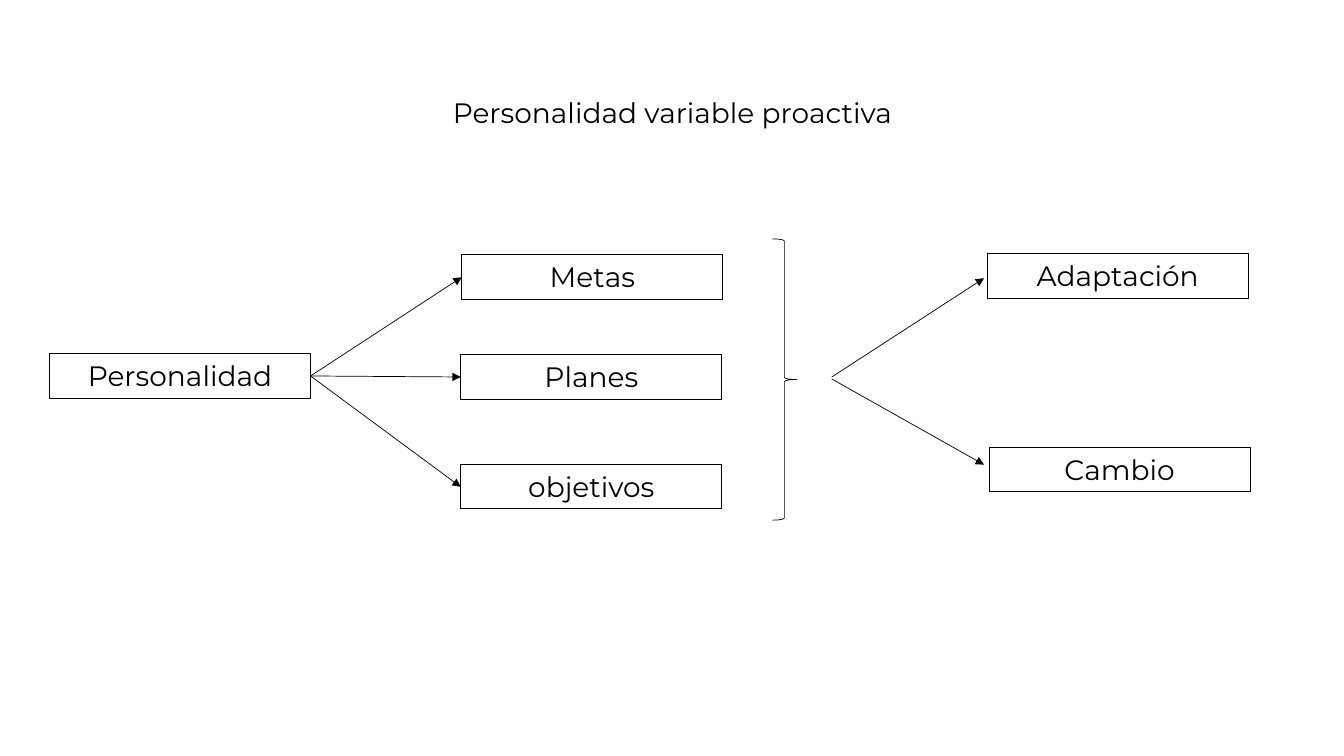
from lxml.etree import SubElement
from pptx import Presentation
from pptx.dml.color import RGBColor
from pptx.enum.shapes import MSO_CONNECTOR as Connector, MSO_SHAPE as Shape
from pptx.enum.text import MSO_ANCHOR as Anchor, MSO_AUTO_SIZE as AutoSize, PP_ALIGN as Align
from pptx.oxml.ns import qn
from pptx.util import Inches, Pt

CELL = 0.1
BOX_WIDTH, BOX_HEIGHT = 25.9, 4.4
LEFT, RIGHT = 1, 3
INK = "000000"
FONT = {"name": "Montserrat", "size": Pt(20), "bold": False}
FRAME = {"word_wrap": True, "auto_size": AutoSize.NONE, "vertical_anchor": Anchor.TOP}
GOALS = [("Metas", 45.8, 25.3), ("Planes", 45.7, 35.2), ("objetivos", 45.7, 46.1)]
OUTCOMES = [("Adaptación", 97.9, 25.2), ("Cambio", 98.1, 44.4)]
OUTCOME_ARROWS = [((82.5, 37.4), (97.6, 27.6)), ((82.5, 37.6), (97.6, 46.1))]


def grid(*cells):
    """Turn counts of grid cells into lengths."""
    return [Inches(count * CELL) for count in cells]


def color(hex_code):
    """Turn a hex string into a colour."""
    return RGBColor.from_string(hex_code)


def assign(target, values):
    """Set every attribute named in a dict."""
    for name, value in values.items():
        setattr(target, name, value)


def write(shape, text):
    """Put one centred paragraph in a shape."""
    frame = shape.text_frame
    assign(frame, FRAME)
    para = frame.paragraphs[0]
    para.alignment = Align.CENTER
    span = para.add_run()
    span.text = text
    assign(span.font, FONT)
    span.font.color.rgb = color(INK)


def outline(shape, width):
    """Give a shape or connector a solid line."""
    shape.line.color.rgb = color(INK)
    shape.line.width = Pt(width)


def add_title(page, text, *cells):
    """Place and fill the title placeholder."""
    title = page.shapes.title
    assign(title, dict(zip(("left", "top", "width", "height"), grid(*cells))))
    write(title, text)


def add_outlined(page, kind, width, *cells):
    """Add an unfilled preset shape."""
    shape = page.shapes.add_shape(kind, *grid(*cells))
    shape.shadow.inherit = False
    shape.fill.background()
    outline(shape, width)
    return shape


def add_box(page, text, column, row):
    """Add a labelled rectangle."""
    box = add_outlined(page, Shape.RECTANGLE, 0.75, column, row, BOX_WIDTH, BOX_HEIGHT)
    write(box, text)
    return box


def add_arrow(page, start=(0, 0), end=(0, 0)):
    """Add a straight arrow between two grid points."""
    arrow = page.shapes.add_connector(Connector.STRAIGHT, *grid(*start, *end))
    outline(arrow, 0.5)
    SubElement(arrow.line._get_or_add_ln(), qn("a:tailEnd"), type="triangle")
    SubElement(arrow._element.spPr, qn("a:effectLst"))
    return arrow


def join(page, source, target):
    """Link the right side of one box to the left side of another."""
    arrow = add_arrow(page)
    arrow.begin_connect(source, RIGHT)
    arrow.end_connect(target, LEFT)


def main():
    """Build and save the slide."""
    deck = Presentation()
    deck.slide_width, deck.slide_height = Inches(13.33), Inches(7.5)
    page = deck.slides.add_slide(deck.slide_layouts[5])
    add_title(page, "Personalidad variable proactiva", 34.6, 9, 64.2, 4.4)
    personality = add_box(page, "Personalidad", 4.9, 35.1)
    for goal in GOALS:
        join(page, personality, add_box(page, *goal))
    add_outlined(page, Shape.RIGHT_BRACE, 0.5, 76.6, 23.7, 2.4, 27.9)
    for start, end in OUTCOME_ARROWS:
        add_arrow(page, start, end)
    for outcome in OUTCOMES:
        add_box(page, *outcome)
    deck.save("out.pptx")


if __name__ == "__main__":
    main()
